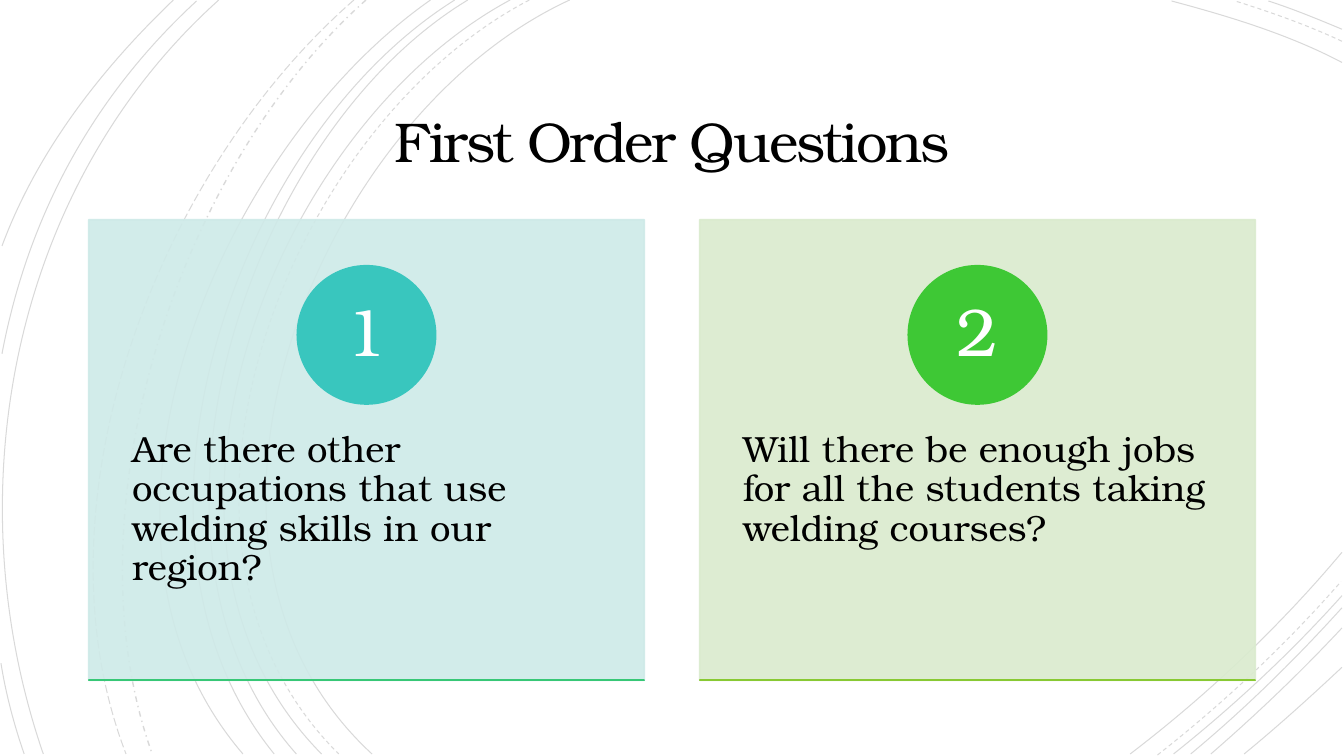
from lxml import etree
from pptx import Presentation
from pptx.dml.color import RGBColor
from pptx.enum.dml import MSO_LINE
from pptx.enum.shapes import MSO_SHAPE
from pptx.enum.text import MSO_ANCHOR, MSO_AUTO_SIZE, PP_ALIGN
from pptx.oxml.ns import qn
from pptx.util import Inches, Pt

SOLID, DASH = MSO_LINE.SOLID, MSO_LINE.DASH
DASH_DOT, LONG_DASH = MSO_LINE.DASH_DOT, MSO_LINE.LONG_DASH
RECTANGLE, OVAL = MSO_SHAPE.RECTANGLE, MSO_SHAPE.OVAL
TOP, MIDDLE = MSO_ANCHOR.TOP, MSO_ANCHOR.MIDDLE
LEFT, CENTER = PP_ALIGN.LEFT, PP_ALIGN.CENTER
NO_AUTOFIT = MSO_AUTO_SIZE.NONE

FONT = "TeX Gyre Bonum"
BLACK = RGBColor(0x00, 0x00, 0x00)
WHITE = RGBColor(0xFF, 0xFF, 0xFF)
PALE_TEAL = RGBColor(0xCE, 0xEA, 0xE8)
TEAL = RGBColor(0x39, 0xC6, 0xBE)
SEA_GREEN = RGBColor(0x37, 0xC7, 0x76)
PALE_GREEN = RGBColor(0xDA, 0xEB, 0xCE)
GREEN = RGBColor(0x3E, 0xC8, 0x35)
LIME = RGBColor(0x88, 0xC9, 0x33)

SLIDE_WIDTH, SLIDE_HEIGHT = Inches(13.33), Inches(7.5)
CARD_LEFT, CARD_TOP = Inches(0.88), Inches(2.18)
CARD_WIDTH, CARD_HEIGHT = Inches(5.51), Inches(4.57)
CARD_PITCH = Inches(6.06)

# Start, two control points and end of each arc, in inches, by dash style
ARCS = {
    SOLID: [
        ((5.65, 0), (3.15, 1.15), (1.43, 5.4), (3.69, 7.48)),
        ((5.06, 0), (2.7, 1.27), (1.1, 5.37), (3.19, 7.48)),
        ((4.64, 0), (2.44, 1.33), (1.1, 5.41), (2.94, 7.48)),
        ((4.51, 0), (2.31, 1.38), (0.97, 5.33), (2.72, 7.48)),
        ((4.27, 0), (2.17, 1.47), (0.53, 5.29), (2.41, 7.48)),
        ((2.17, 0), (0.11, 1.85), (-0.46, 4.9), (0.43, 7.48)),
        ((1.95, 0.01), (0.92, 0.96), (0.28, 2.14), (0.02, 3.51)),
        ((1.72, 0), (1, 0.69), (0.37, 1.5), (0.02, 2.44)),
        ((0.01, 6.58), (0.06, 6.89), (0.14, 7.19), (0.24, 7.48)),
        ((13.31, 0.62), (12.78, 0.34), (12.18, 0.16), (11.62, 0.01)),
        ((13.31, 0.29), (13.07, 0.19), (12.83, 0.09), (12.58, 0.01)),
        ((11.21, 7.48), (11.97, 6.9), (12.69, 6.22), (13.31, 5.48)),
        ((11.64, 7.48), (12.23, 7.01), (12.8, 6.48), (13.31, 5.91)),
        ((11.81, 7.48), (12.34, 7.04), (12.84, 6.55), (13.31, 6.03)),
        ((12.01, 7.48), (12.46, 7.09), (12.9, 6.67), (13.31, 6.23)),
        ((12.34, 7.48), (12.67, 7.21), (12.99, 6.92), (13.31, 6.62)),
    ],
    DASH: [
        ((5.25, 0), (2.85, 1.25), (1.23, 5.37), (3.36, 7.48)),
        ((13.31, 0.41), (12.97, 0.25), (12.6, 0.12), (12.25, 0.01)),
        ((11.48, 7.49), (12.13, 6.98), (12.75, 6.4), (13.3, 5.77)),
    ],
    DASH_DOT: [((3.63, 0), (1.76, 1.66), (0.65, 5.09), (1.51, 7.48))],
    LONG_DASH: [((3.51, 0), (1.57, 1.69), (0.29, 4.99), (1.25, 7.48))],
}

CARDS = [
    ("1", "Are there other occupations that use welding skills in our region?",
     PALE_TEAL, TEAL, SEA_GREEN),
    ("2", "Will there be enough jobs for all the students taking welding courses?",
     PALE_GREEN, GREEN, LIME),
]


def set_opacity(fill, percent):
    color = fill._xPr.find(qn("a:solidFill"))[0]
    etree.SubElement(color, qn("a:alpha")).set("val", str(percent * 1000))


def style_line(line, color, width, opacity=100):
    line.color.rgb = color
    line.width = Pt(width)
    if opacity < 100:
        set_opacity(line.fill, opacity)


def write_text(shape, text, size, color, alignment, anchor, insets, spacing):
    """Fill the shape with one run; insets are horizontal and vertical inches."""
    frame = shape.text_frame
    frame.word_wrap = True
    frame.auto_size = NO_AUTOFIT
    frame.vertical_anchor = anchor
    frame.margin_left = frame.margin_right = Inches(insets[0])
    frame.margin_top = frame.margin_bottom = Inches(insets[1])
    paragraph = frame.paragraphs[0]
    paragraph.alignment = alignment
    paragraph.line_spacing = spacing
    run = paragraph.add_run()
    run.text = text
    run.font.name = FONT
    run.font.size = Pt(size)
    run.font.color.rgb = color
    return run


def add_block(shapes, preset, box, color, opacity=100):
    block = shapes.add_shape(preset, *box)
    block.shadow.inherit = False
    block.fill.solid()
    block.fill.fore_color.rgb = color
    if opacity < 100:
        set_opacity(block.fill, opacity)
    style_line(block.line, color, 1.25, opacity)
    return block


def add_backdrop(slide):
    backdrop = add_block(slide.shapes, RECTANGLE, (0, 0, SLIDE_WIDTH, SLIDE_HEIGHT), WHITE)
    backdrop.line.fill.background()


def add_curve(shapes, controls):
    """Draw one cubic curve through a start, two control points and an end."""
    points = [(Inches(x), Inches(y)) for x, y in controls]
    builder = shapes.build_freeform(*points[0])
    builder.add_line_segments(points[1:], close=False)
    curve = builder.convert_to_shape()
    segments = list(curve.element.iter(qn("a:lnTo")))
    outline = segments[0].getparent()
    bezier = etree.SubElement(outline, qn("a:cubicBezTo"))
    for segment in segments:
        bezier.append(segment[0])
        outline.remove(segment)
    return curve


def add_arcs(slide):
    shapes = slide.shapes.add_group_shape().shapes
    for dash, arcs in ARCS.items():
        for controls in arcs:
            arc = add_curve(shapes, controls)
            arc.shadow.inherit = False
            arc.fill.background()
            style_line(arc.line, BLACK, 1 if dash == DASH_DOT else 0.75, 15)
            arc.line.dash_style = dash


def add_title(slide, box, text):
    title = slide.shapes.title
    title.left, title.top, title.width, title.height = box
    run = write_text(title, text, 40, BLACK, CENTER, MIDDLE, (0.25, 0.25), 0.85)
    run.font._element.set("spc", "-150")
    # Bring the title in front of the backdrop and arcs
    title.element.getparent().append(title.element)


def add_card(slide, box, number, question, panel_color, badge_color, rule_color):
    left, top, width, height = box
    shapes = slide.shapes.add_group_shape().shapes
    add_block(shapes, RECTANGLE, box, panel_color, 90)

    body = shapes.add_textbox(left, top + int(height * 0.38), width, int(height * 0.6))
    write_text(body, question, 26, BLACK, LEFT, TOP, (0.43, 0.36), 0.9)

    diameter = int(height * 0.3)
    badge_box = (left + (width - diameter) // 2, top + height // 10, diameter, diameter)
    badge = add_block(shapes, OVAL, badge_box, badge_color)
    write_text(badge, number, 48, WHITE, CENTER, MIDDLE, (0.11, 0.01), 0.9)

    add_block(shapes, RECTANGLE, (left, top + height, width, 0), rule_color)


def main():
    presentation = Presentation()
    presentation.slide_width = SLIDE_WIDTH
    presentation.slide_height = SLIDE_HEIGHT
    slide = presentation.slides.add_slide(presentation.slide_layouts[5])

    add_backdrop(slide)
    add_arcs(slide)
    title_box = (Inches(1.92), Inches(0.87), Inches(9.49), Inches(1.15))
    add_title(slide, title_box, "First Order Questions")
    for column, card in enumerate(CARDS):
        box = (CARD_LEFT + column * CARD_PITCH, CARD_TOP, CARD_WIDTH, CARD_HEIGHT)
        add_card(slide, box, *card)
    presentation.save("out.pptx")


if __name__ == "__main__":
    main()
